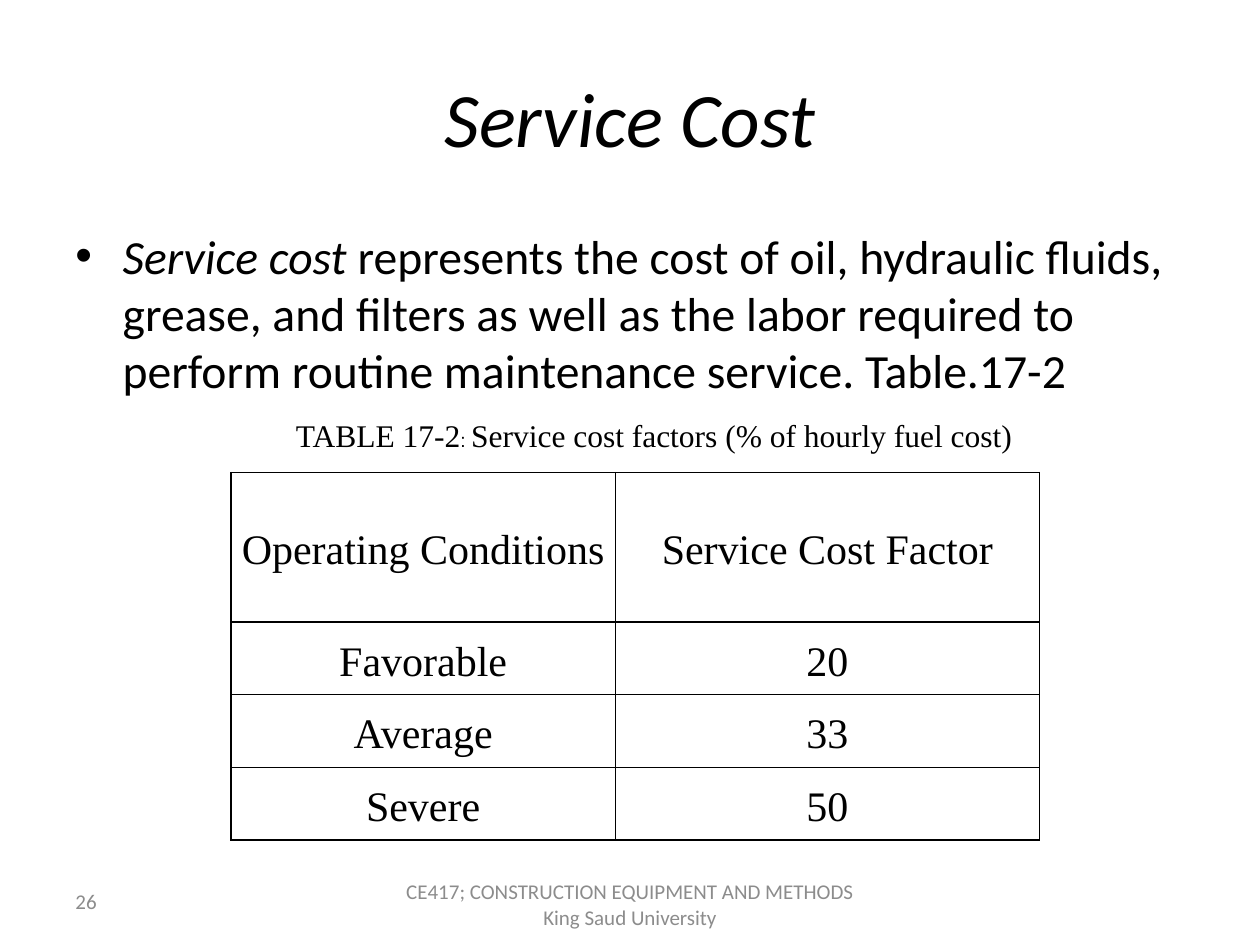
from lxml.etree import SubElement
from pptx import Presentation
from pptx.dml.color import RGBColor
from pptx.enum.text import MSO_ANCHOR as Anchor, PP_ALIGN as Align
from pptx.oxml.ns import qn
from pptx.util import Pt

COLORS = {"text": "000000", "footer": "8C8C8C", "border": "000000"}
SANS, SERIF, LABEL = "Calibri", "Times New Roman", "Arial"


def add_text(para, text, size, font=SANS, color="text", italic=False):
    span = para.add_run()
    span.text = text
    span.font.size = Pt(size)
    span.font.name = font
    span.font.italic = italic
    span.font.color.rgb = RGBColor.from_string(COLORS[color])


class SlideBuilder:
    def __init__(self, deck):
        self.slide = deck.slides.add_slide(deck.slide_layouts[5])

    def title(self, text, left, top, width, height):
        box = self.slide.shapes.title
        box.left, box.top, box.width, box.height = map(Pt, (left, top, width, height))
        box.text_frame.vertical_anchor = Anchor.MIDDLE
        para = box.text_frame.paragraphs[0]
        para.alignment = Align.CENTER
        add_text(para, text, 44, italic=True)

    def text_box(self, left, top, width, height, align=Align.LEFT, anchor=Anchor.MIDDLE):
        box = self.slide.shapes.add_textbox(*map(Pt, (left, top, width, height)))
        frame = box.text_frame
        frame.word_wrap = True
        frame.vertical_anchor = anchor
        para = frame.paragraphs[0]
        para.alignment = align
        return para

    def bullet(self, left, top, width, height, indent=27):
        para = self.text_box(left, top, width, height, anchor=Anchor.TOP)
        props = para._p.get_or_add_pPr()
        props.set("marL", str(Pt(indent)))
        props.set("indent", str(-Pt(indent)))
        SubElement(props, qn("a:buFont"), typeface=LABEL)
        SubElement(props, qn("a:buChar"), char="•")
        return para

    def table(self, rows, left, top, widths, heights):
        frame = self.slide.shapes.add_table(
            len(rows), len(widths), Pt(left), Pt(top), Pt(sum(widths)), Pt(sum(heights)))
        table = frame.table
        table.first_row = table.horz_banding = False
        for column, width in zip(table.columns, widths):
            column.width = Pt(width)
        for row, height, values in zip(table.rows, heights, rows):
            row.height = Pt(height)
            for cell, value in zip(row.cells, values):
                self.cell(cell, value)

    def cell(self, cell, value):
        cell.margin_left = cell.margin_right = Pt(5)
        cell.margin_top = cell.margin_bottom = 0
        cell.vertical_anchor = Anchor.MIDDLE
        para = cell.text_frame.paragraphs[0]
        para.alignment = Align.CENTER
        para.line_spacing = 1.15
        add_text(para, value, 24, font=SERIF)
        props = cell._tc.get_or_add_tcPr()
        for side in ("lnL", "lnR", "lnT", "lnB"):
            line = SubElement(props, qn(f"a:{side}"), w=str(Pt(1)))
            fill = SubElement(line, qn("a:solidFill"))
            SubElement(fill, qn("a:srgbClr"), val=COLORS["border"])
        cell.fill.background()


def main():
    deck = Presentation()
    deck.slide_width, deck.slide_height = Pt(720), Pt(540)
    page = SlideBuilder(deck)

    page.title("Service Cost", 36, 21.6, 648, 90)

    body = page.bullet(36, 126, 648, 96)
    add_text(body, "Service cost ", 27.2, italic=True)
    add_text(body, "represents the cost of oil, hydraulic fluids, grease, and filters "
             "as well as the labor required to perform routine maintenance service. "
             "Table.17-2", 27.2)

    rows = [
        ("Operating Conditions", "Service Cost Factor"),
        ("Favorable", "20"),
        ("Average", "33"),
        ("Severe", "50"),
    ]
    page.table(rows, 132, 270, (219.6, 242.4), (85.5, 41.5, 41.5, 41.5))

    caption = page.text_box(162, 234, 438, 29)
    add_text(caption, "TABLE 17-2", 18, font=SERIF)
    add_text(caption, ": ", 11, font=LABEL)
    add_text(caption, "Service cost factors (% of hourly fuel cost)", 18, font=SERIF)

    number = page.text_box(36, 500.5, 168, 28.75)
    add_text(number, "26", 12, color="footer")

    footer = page.text_box(222, 504, 276, 25.2, align=Align.CENTER)
    add_text(footer, "CE417; CONSTRUCTION EQUIPMENT AND METHODS King Saud University",
             12, color="footer")

    deck.save("out.pptx")


if __name__ == "__main__":
    main()
